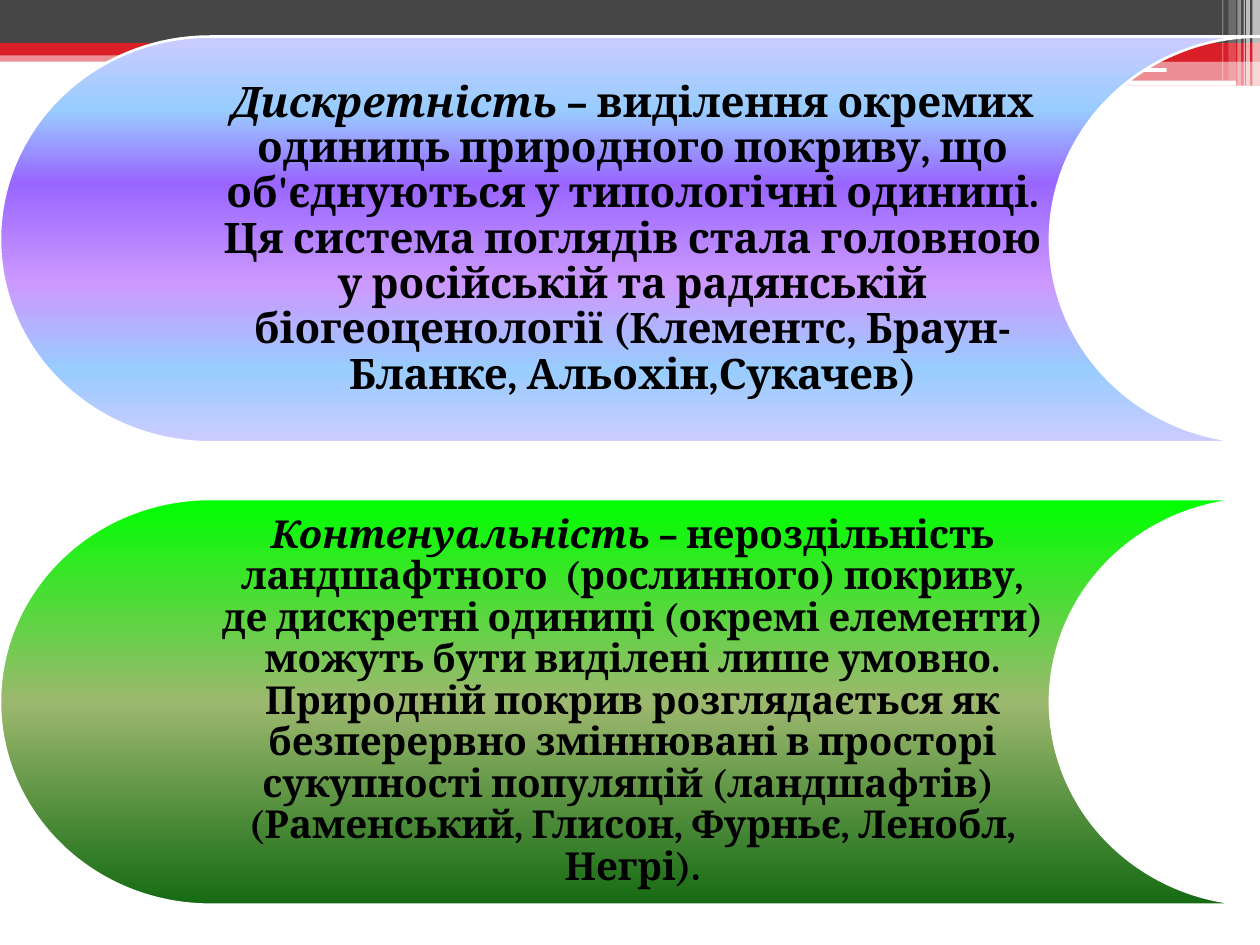
import pptx
import pptx.util
import pptx.dml.color
import pptx.enum.shapes
import pptx.enum.text
import pptx.oxml.ns
import lxml.etree

Inches = pptx.util.Inches
Pt = pptx.util.Pt
Shape = pptx.enum.shapes.MSO_SHAPE

COLORS = {
    "white": "FFFFFF",
    "black": "000000",
    "red": "DA1F28",
    "charcoal": "464646",
}

HEADER_BARS = [
    (Shape.RECTANGLE, (0, 0.4, 10, 0.09), "red", 50),
    (Shape.RECTANGLE, (0, 0, 10, 0.34), "charcoal", 100),
    (Shape.RECTANGLE, (0, 0.34, 10, 0.1), "red", 100),
    (Shape.RECTANGLE, (5.92, 0.39, 4.08, 0.1), "red", 100),
    (Shape.RECTANGLE, (5.92, 0.48, 4.08, 0.2), "red", 50),
    (Shape.ROUNDED_RECTANGLE, (5.91, 0.54, 3.35, 0.03), "white", 100),
    (Shape.ROUNDED_RECTANGLE, (8.06, 0.64, 1.75, 0.04), "white", 100),
]

STRIPES = [
    (9.94, 0.06, 0.68, 65),
    (9.89, 0.03, 0.68, 65),
    (9.87, 0.01, 0.68, 60),
    (9.82, 0.03, 0.68, 40),
    (9.75, 0.06, 0.64, 20),
    (9.7, 0.01, 0.64, 30),
]

CONCEPTS = [
    {
        "top": 0.29,
        "size": 24,
        "stops": [(0, "CCCCFF"), (18, "99CCFF"), (36, "9966FF"),
                  (61, "CC99FF"), (82, "99CCFF"), (100, "CCCCFF")],
        "term": "Дискретність",
        "meaning": " – виділення окремих одиниць природного покриву, що "
                   "об'єднуються у типологічні одиниці. Ця система поглядів "
                   "стала головною у російській та радянській біогеоценології "
                   "(Клементс, Браун-Бланке, Альохін,Сукачев)",
    },
    {
        "top": 3.96,
        "size": 22,
        "stops": [(0, "00FF00"), (50, "9CB86E"), (100, "156B13")],
        "term": "Контенуальність",
        "meaning": " – нероздільність ландшафтного  (рослинного) покриву, де "
                   "дискретні одиниці (окремі елементи) можуть бути виділені "
                   "лише умовно. Природній покрив розглядається як безперервно "
                   "зміннювані в просторі сукупності популяцій (ландшафтів)  "
                   "(Раменський, Глисон, Фурньє, Ленобл, Негрі).",
    },
]
BAND_HEIGHT = 3.22


def color(name):
    return pptx.dml.color.RGBColor.from_string(COLORS[name])


def add_element(parent, tag, **attributes):
    return lxml.etree.SubElement(parent, pptx.oxml.ns.qn(tag), attributes)


def add_shape(page, kind, place):
    shape = page.shapes.add_shape(kind, *map(Inches, place))
    shape.shadow.inherit = False
    return shape


def add_bar(page, kind, place, fill, opacity):
    bar = add_shape(page, kind, place)
    bar.fill.solid()
    bar.fill.fore_color.rgb = color(fill)
    bar.line.fill.background()
    if opacity < 100:
        tint = bar.fill._xPr.find(".//" + pptx.oxml.ns.qn("a:srgbClr"))
        add_element(tint, "a:alpha", val=str(opacity * 1000))


def add_band(page, concept):
    band = add_shape(page, Shape.FLOWCHART_STORED_DATA,
                     (0, concept["top"], 10, BAND_HEIGHT))
    band.fill.gradient()
    band.fill.gradient_angle = 270
    stop_list = band.fill._xPr.find(".//" + pptx.oxml.ns.qn("a:gsLst"))
    for stop in list(stop_list):
        stop_list.remove(stop)
    for position, shade in concept["stops"]:
        stop = add_element(stop_list, "a:gs", pos=str(position * 1000))
        add_element(stop, "a:srgbClr", val=shade)
    band.line.color.rgb = color("white")
    band.line.width = Pt(1.5)


def add_definition(page, concept):
    place = (1.67, concept["top"], 6.67, BAND_HEIGHT)
    box = page.shapes.add_textbox(*map(Inches, place))
    frame = box.text_frame
    frame.word_wrap = True
    frame.vertical_anchor = pptx.enum.text.MSO_ANCHOR.MIDDLE
    frame.margin_left, frame.margin_right = Inches(0.03), 0
    frame.margin_top = frame.margin_bottom = Inches(0.02)
    para = frame.paragraphs[0]
    para.alignment = pptx.enum.text.PP_ALIGN.CENTER
    para.line_spacing = 0.9
    para.space_after = Pt(concept["size"] * 0.35)
    para.font.name = "Cambria"
    para.font.size = Pt(concept["size"])
    para.font.bold = True
    para.font.color.rgb = color("black")
    for text, italic in ((concept["term"], True), (concept["meaning"], False)):
        span = para.add_run()
        span.text = text
        span.font.italic = italic


def main():
    deck = pptx.Presentation()
    deck.slide_width, deck.slide_height = Inches(10), Inches(7.5)
    page = deck.slides.add_slide(deck.slide_layouts[6])
    for bar in HEADER_BARS:
        add_bar(page, *bar)
    for left, width, height, opacity in STRIPES:
        add_bar(page, Shape.RECTANGLE, (left, 0, width, height), "white", opacity)
    for concept in CONCEPTS:
        add_band(page, concept)
        add_definition(page, concept)
    deck.save("out.pptx")


if __name__ == "__main__":
    main()
